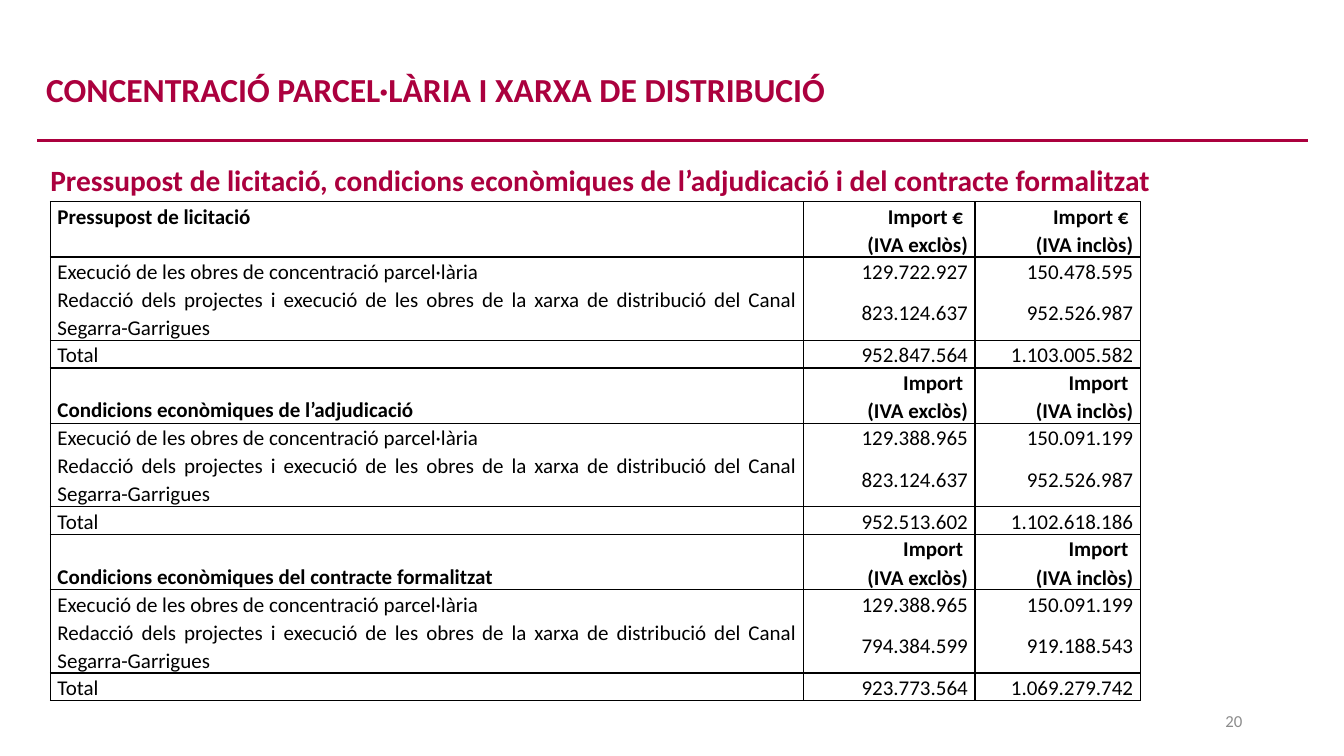
from dataclasses import dataclass

from lxml.etree import SubElement
from pptx import Presentation
from pptx.dml.color import RGBColor
from pptx.enum.shapes import MSO_CONNECTOR as Conn
from pptx.enum.text import MSO_ANCHOR as Anchor, PP_ALIGN as Align
from pptx.oxml.ns import qn
from pptx.util import Inches, Pt

FONT = "Calibri"
WINE, BLACK, GREY = "AB003E", "000000", "8C8C8C"
WORKS = "Execució de les obres de concentració parcel·lària"
PIPES = ("Redacció dels projectes i execució de les obres de la xarxa "
         "de distribució del Canal Segarra-Garrigues ")


@dataclass
class Label:
    text: str
    box: tuple[float, float, float, float]
    size: int
    color: str
    bold: bool = True
    align: Align = Align.LEFT
    anchor: Anchor = Anchor.MIDDLE
    space: float = 1.0


@dataclass
class Block:
    title: str
    unit: str
    works: tuple[str, str]
    pipes: tuple[str, str]
    total: tuple[str, str]
    anchor: Anchor = Anchor.BOTTOM


LABELS = [
    Label("Pressupost de licitació, condicions econòmiques de l’adjudicació "
          "i del contracte formalitzat", (0.4, 1.52, 11.59, 0.48), 21, WINE,
          align=Align.JUSTIFY, anchor=Anchor.TOP, space=1.1),
    Label("20", (9.42, 6.95, 3, 0.4), 12, GREY, bold=False, align=Align.RIGHT),
    Label("CONCENTRACIÓ PARCEL·LÀRIA I XARXA DE DISTRIBUCIÓ",
          (0.36, 0.59, 12.6, 0.64), 24, WINE, space=0.9),
]
BLOCKS = [
    Block("Pressupost de licitació", "Import € ",
          ("129.722.927", "150.478.595"), ("823.124.637", "952.526.987"),
          ("952.847.564", "1.103.005.582"), Anchor.TOP),
    Block("Condicions econòmiques de l’adjudicació", "Import ",
          ("129.388.965", "150.091.199"), ("823.124.637", "952.526.987"),
          ("952.513.602", "1.102.618.186")),
    Block("Condicions econòmiques del contracte formalitzat", "Import ",
          ("129.388.965", "150.091.199"), ("794.384.599", "919.188.543"),
          ("923.773.564", "1.069.279.742")),
]


def paint(color: str) -> RGBColor:
    return RGBColor.from_string(color)


def write(para, text: str, size: int, color: str, bold: bool,
          align: Align, space: float) -> None:
    para.alignment, para.line_spacing = align, space
    for i, line in enumerate(text.split("\n")):
        if i:
            para.add_line_break()
        run = para.add_run()
        run.text = line
        font = run.font
        font.name, font.size, font.bold = FONT, Pt(size), bold
        font.color.rgb = paint(color)


def add_label(slide, item: Label) -> None:
    frame = slide.shapes.add_textbox(*map(Inches, item.box)).text_frame
    frame.word_wrap = True
    frame.vertical_anchor = item.anchor
    write(frame.paragraphs[0], item.text, item.size, item.color, item.bold,
          item.align, item.space)


def add_edges(cell, open_side: str) -> None:
    props = cell._tc.get_or_add_tcPr()
    for side in "LRTB":
        edge = SubElement(props, qn(f"a:ln{side}"), w=str(Pt(1)))
        if side == open_side:
            SubElement(edge, qn("a:noFill"))
        else:
            fill = SubElement(edge, qn("a:solidFill"))
            SubElement(fill, qn("a:srgbClr"), val=BLACK)


def fill_cell(cell, text: str, first: bool, bold: bool, anchor: Anchor,
              open_side: str) -> None:
    cell.margin_left = cell.margin_right = Inches(0.07)
    cell.margin_top = cell.margin_bottom = 0
    cell.vertical_anchor = anchor
    add_edges(cell, open_side)
    cell.fill.background()
    write(cell.text_frame.paragraphs[0], text, 15, BLACK, bold,
          Align.JUSTIFY if first else Align.RIGHT, 1.1)


def add_budget(slide, blocks: list[Block]) -> None:
    table = slide.shapes.add_table(
        4 * len(blocks), 3, Inches(0.5), Inches(2), Inches(10.81), Inches(4.77)).table
    table.first_row = table.horz_banding = False
    for col, width in zip(table.columns, (7.47, 1.7, 1.64)):
        col.width = Inches(width)
    for i, row in enumerate(table.rows):
        row.height = Inches(0.26 if i % 2 else 0.53)
    for b, block in enumerate(blocks):
        heads = [f"{block.unit}\n(IVA {kind})" for kind in ("exclòs", "inclòs")]
        # The two works rows share an open edge
        rows = [((block.title, *heads), ""), ((WORKS, *block.works), "B"),
                ((PIPES, *block.pipes), "T"), (("Total", *block.total), "")]
        for r, (texts, open_side) in enumerate(rows):
            for c, text in enumerate(texts):
                head = r == 0
                anchor = Anchor.MIDDLE
                if head:
                    anchor = Anchor.BOTTOM if c else block.anchor
                fill_cell(table.cell(4 * b + r, c), text, c == 0, head,
                          anchor, open_side)


def add_rule(slide) -> None:
    rule = slide.shapes.add_connector(
        Conn.STRAIGHT, Inches(0.37), Inches(1.39), Inches(12.97), Inches(1.39))
    rule.line.color.rgb = paint(WINE)
    rule.line.width = Pt(2.25)
    SubElement(rule._element.spPr, qn("a:effectLst"))


def main() -> None:
    deck = Presentation()
    deck.slide_width, deck.slide_height = Inches(13.33), Inches(7.5)
    slide = deck.slides.add_slide(deck.slide_layouts[6])
    # Heading rule and texts
    add_rule(slide)
    for item in LABELS:
        add_label(slide, item)
    # Budget table
    add_budget(slide, BLOCKS)
    deck.save("out.pptx")


if __name__ == "__main__":
    main()
